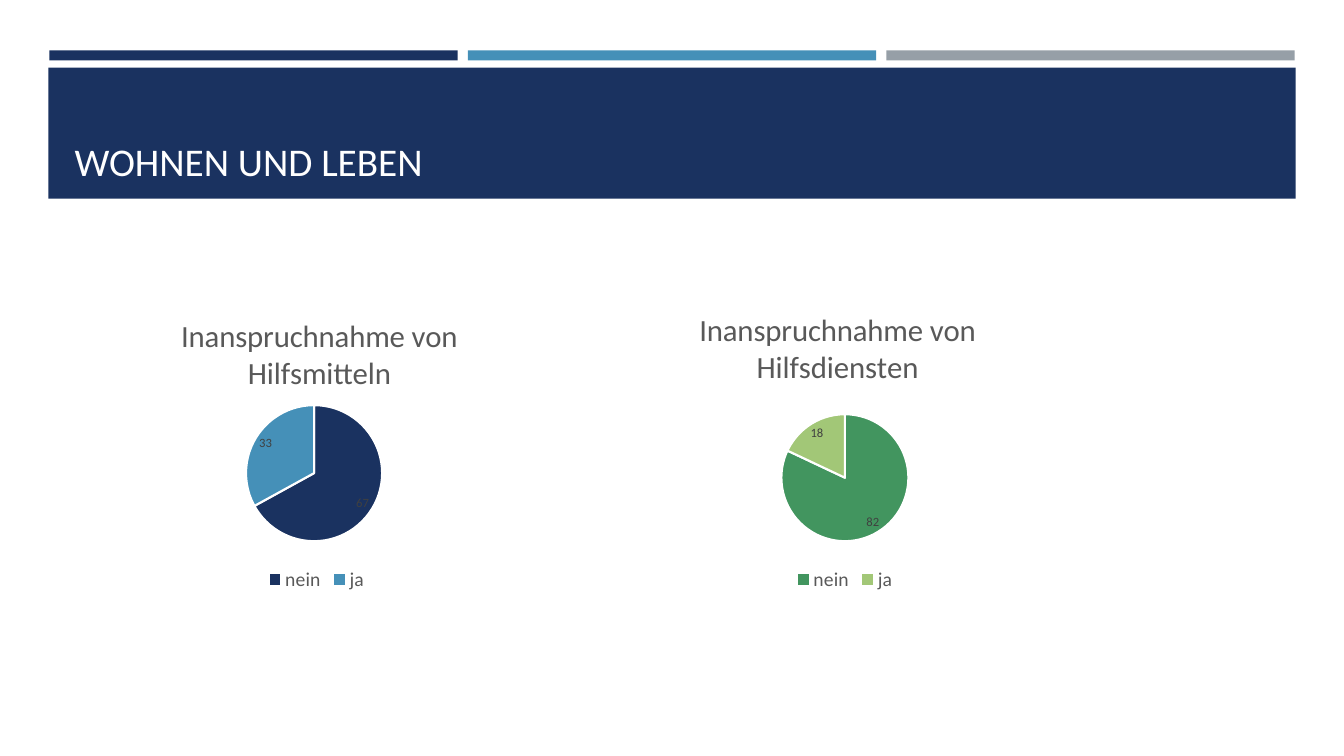
"""Build the slide on living, with two pie charts."""
from lxml import etree
from pptx import Presentation
from pptx.chart.data import CategoryChartData
from pptx.dml.color import RGBColor
from pptx.enum.chart import XL_CHART_TYPE, XL_LABEL_POSITION, XL_LEGEND_POSITION
from pptx.enum.shapes import MSO_SHAPE
from pptx.enum.text import MSO_ANCHOR, PP_ALIGN
from pptx.oxml.ns import qn
from pptx.util import Inches, Pt

PIE = XL_CHART_TYPE.PIE
BEST = XL_LABEL_POSITION.BEST_FIT
BOTTOM = XL_LEGEND_POSITION.BOTTOM
RECT = MSO_SHAPE.RECTANGLE
LOW = MSO_ANCHOR.BOTTOM
LEFT = PP_ALIGN.LEFT
FACE = "Calibri"
NAVY, BLUE, GRAY = "1A3260", "4590B8", "969FA7"


def style(font, size, color):
    font.name = FACE
    font.size = Pt(size)
    font.bold = False
    font.color.rgb = RGBColor.from_string(color)


def place(node, index, parts):
    for old in node.findall(qn("c:layout")):
        node.remove(old)
    layout = etree.Element(qn("c:layout"))
    manual = etree.SubElement(layout, qn("c:manualLayout"))
    for tag, val in parts:
        etree.SubElement(manual, qn("c:" + tag)).set("val", str(val))
    node.insert(index, layout)


deck = Presentation()
deck.slide_width = Inches(13.33)
deck.slide_height = Inches(7.5)
slide = deck.slides.add_slide(deck.slide_layouts[5])
shapes = slide.shapes

bars = [(0.49 + 4.15 * i, 0.5, 4.05, 0.1, color)
        for i, color in enumerate([NAVY, BLUE, GRAY])]
for x, y, w, h, color in bars + [(0.48, 0.67, 12.37, 1.3, NAVY)]:
    bar = shapes.add_shape(RECT, Inches(x), Inches(y), Inches(w), Inches(h))
    bar.shadow.inherit = False
    bar.fill.solid()
    bar.fill.fore_color.rgb = RGBColor.from_string(color)
    bar.line.fill.background()

title = shapes.title
title.left, title.top = Inches(0.64), Inches(0.77)
title.width, title.height = Inches(12.06), Inches(1.11)
shapes._spTree.append(title.element)
frame = title.text_frame
frame.vertical_anchor = LOW
frame.word_wrap = True
para = frame.paragraphs[0]
para.alignment = LEFT
run = para.add_run()
run.text = "WOHNEN UND LEBEN"
style(run.font, 28, "FFFFFF")

pies = [
    (0.64, "Inanspruchnahme von Hilfsmitteln", (67, 33), (NAVY, BLUE),
     (0.22, 0.05), (0.36, 0.37, 0.27, 0.45)),
    (5.88, "Inanspruchnahme von Hilfsdiensten", (82, 18), ("42955F", "A2C777"),
     (0.2, 0.03), (0.37, 0.4, 0.26, 0.42)),
]
for left, head, vals, colors, spot, area in pies:
    data = CategoryChartData()
    data.categories = ["nein", "ja"]
    data.add_series("Series 1", vals)
    chart = shapes.add_chart(PIE, Inches(left), Inches(2.91),
                             Inches(5), Inches(3), data).chart
    style(chart.font, 10, "000000")

    chart.has_title = True
    run = chart.chart_title.text_frame.paragraphs[0].add_run()
    run.text = head
    style(run.font, 22, "595959")
    modes = [("xMode", "edge"), ("yMode", "edge")]
    place(chart.element.find(".//" + qn("c:title")), 1,
          modes + list(zip("xy", spot)))
    place(chart.element.find(".//" + qn("c:plotArea")), 0,
          [("layoutTarget", "inner")] + modes + list(zip("xywh", area)))

    chart.has_legend = True
    chart.legend.position = BOTTOM
    chart.legend.include_in_layout = False
    style(chart.legend.font, 14, "595959")

    plot = chart.plots[0]
    plot.vary_by_categories = True
    plot.has_data_labels = True
    labels = plot.data_labels
    labels.show_value = True
    labels.show_percentage = False
    labels.position = BEST
    style(labels.font, 9, "404040")
    for i, color in enumerate(colors):
        look = plot.series[0].points[i].format
        look.fill.solid()
        look.fill.fore_color.rgb = RGBColor.from_string(color)
        look.line.color.rgb = RGBColor.from_string("FFFFFF")
        look.line.width = Pt(1.5)

deck.save("out.pptx")
